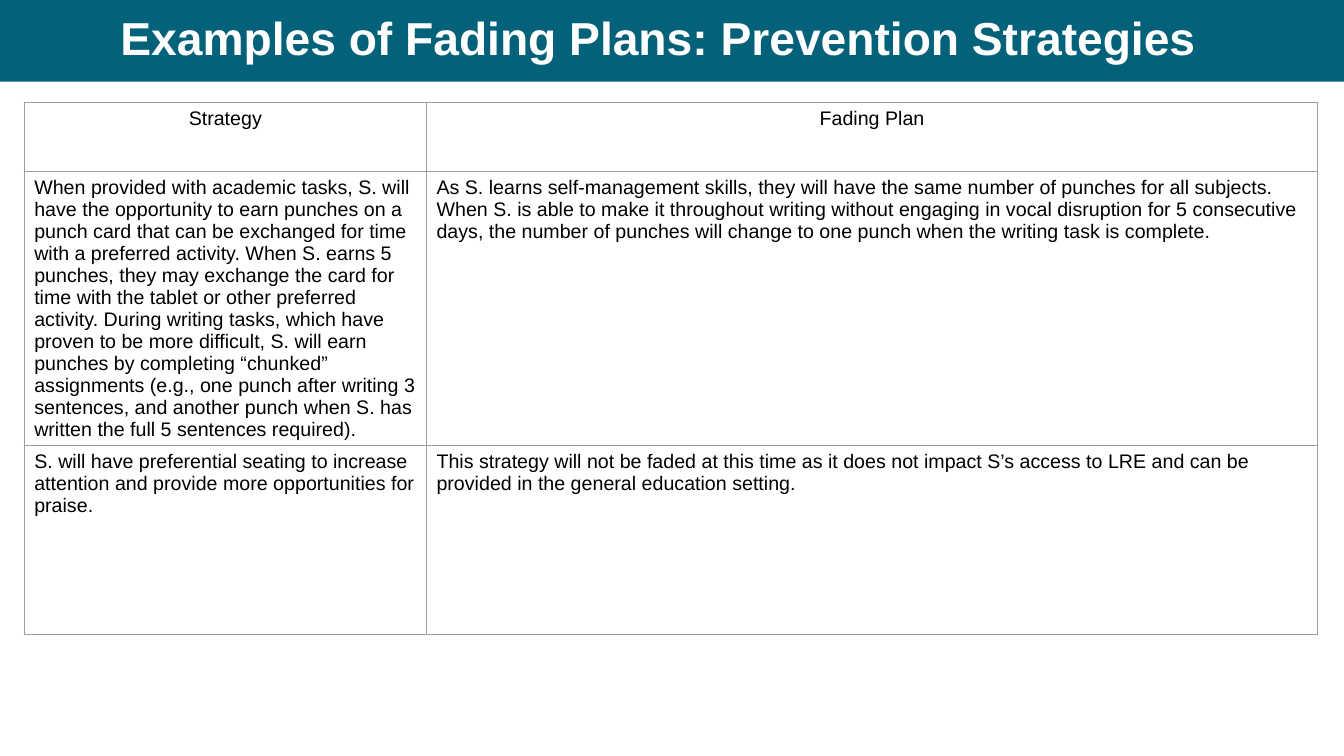
"""Build the slide on fading plans for prevention strategies."""
from lxml.etree import SubElement
from pptx import Presentation
from pptx.dml.color import RGBColor
from pptx.enum.shapes import MSO_SHAPE
from pptx.enum.text import MSO_ANCHOR, MSO_AUTO_SIZE, PP_ALIGN
from pptx.oxml.ns import qn
from pptx.util import Inches, Pt

TEAL = RGBColor(0x03, 0x61, 0x7A)
WHITE = RGBColor(0xFF, 0xFF, 0xFF)
BLACK = RGBColor(0x00, 0x00, 0x00)
GREY = RGBColor(0x9E, 0x9E, 0x9E)

TITLE_FONT = {"name": "Arial", "size": Pt(33), "bold": True}
CELL_FONT = {"name": "Arial", "size": Pt(14), "bold": False}
TITLE_FRAME = {"vertical_anchor": MSO_ANCHOR.MIDDLE, "word_wrap": True,
               "auto_size": MSO_AUTO_SIZE.NONE}

BAND_HEIGHT = 0.81
COL_WIDTHS = (3.99, 8.84)
ROW_HEIGHTS = (0.68, 1.87, 1.87)
ROWS = (
    ("Strategy", "Fading Plan"),
    ("When provided with academic tasks, S. will have the opportunity to earn "
     "punches on a punch card that can be exchanged for time with a preferred "
     "activity. When S. earns 5 punches, they may exchange the card for time "
     "with the tablet or other preferred activity. During writing tasks, which "
     "have proven to be more difficult, S. will earn punches by completing "
     "“chunked” assignments (e.g., one punch after writing 3 sentences, and "
     "another punch when S. has written the full 5 sentences required).",
     "As S. learns self-management skills, they will have the same number of "
     "punches for all subjects. When S. is able to make it throughout writing "
     "without engaging in vocal disruption for 5 consecutive days, the number "
     "of punches will change to one punch when the writing task is complete."),
    ("S. will have preferential seating to increase attention and provide more "
     "opportunities for praise.",
     "This strategy will not be faded at this time as it does not impact S’s "
     "access to LRE and can be provided in the general education setting."),
)


def set_attrs(obj, values):
    for name, value in values.items():
        setattr(obj, name, value)


def write(tf, text, font, color, align):
    p = tf.paragraphs[0]
    p.alignment = align
    r = p.add_run()
    r.text = text
    set_attrs(r.font, font)
    r.font.color.rgb = color
    return p


def add_title(s, text):
    title = s.shapes.title
    set_attrs(title, {"left": Inches(0.37), "top": Inches(0),
                      "width": Inches(12.32), "height": Inches(BAND_HEIGHT)})
    set_attrs(title.text_frame, TITLE_FRAME)
    p = write(title.text_frame, text, TITLE_FONT, WHITE, PP_ALIGN.CENTER)
    p.line_spacing = 0.9


def add_band(s, width):
    band = s.shapes.add_shape(MSO_SHAPE.RECTANGLE, 0, 0, width, Inches(BAND_HEIGHT))
    band.shadow.inherit = False
    band.fill.solid()
    band.fill.fore_color.rgb = TEAL
    band.line.fill.background()
    s.shapes.title.element.addprevious(band.element)


def add_borders(cell):
    tc_pr = cell._tc.get_or_add_tcPr()
    for i, side in enumerate(("lnL", "lnR", "lnT", "lnB")):
        ln = tc_pr.makeelement(qn(f"a:{side}"), {"w": str(Pt(0.75))})
        fill = SubElement(ln, qn("a:solidFill"))
        SubElement(fill, qn("a:srgbClr"), val=str(GREY))
        tc_pr.insert(i, ln)


def add_plan_table(s):
    frame = s.shapes.add_table(len(ROWS), len(COL_WIDTHS), Inches(0.24),
                               Inches(1.02), Inches(12.82), Inches(5.44))
    table = frame.table
    set_attrs(table, {"first_row": False, "horz_banding": False})
    for col, width in zip(table.columns, COL_WIDTHS):
        col.width = Inches(width)
    for row, height in zip(table.rows, ROW_HEIGHTS):
        row.height = Inches(height)
    frame.height = Inches(5.44)
    for i, texts in enumerate(ROWS):
        align = PP_ALIGN.LEFT if i else PP_ALIGN.CENTER
        for j, text in enumerate(texts):
            cell = table.cell(i, j)
            cell.fill.background()
            add_borders(cell)
            write(cell.text_frame, text, CELL_FONT, BLACK, align)


def main():
    prs = Presentation()
    set_attrs(prs, {"slide_width": Inches(13.33), "slide_height": Inches(7.5)})
    s = prs.slides.add_slide(prs.slide_layouts[5])
    add_title(s, "Examples of Fading Plans: Prevention Strategies")
    add_band(s, prs.slide_width)
    add_plan_table(s)
    prs.save("out.pptx")


if __name__ == "__main__":
    main()
